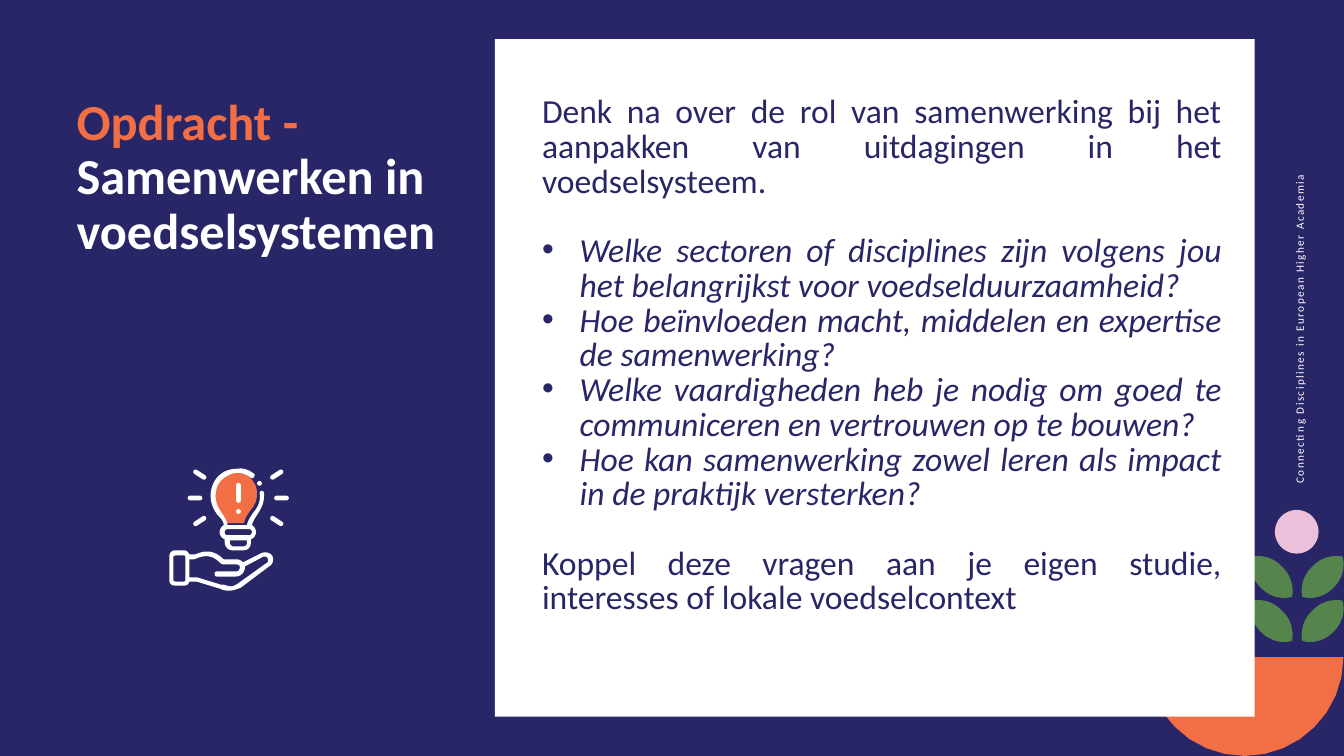
"""Build the assignment slide on collaborating in food systems."""
from dataclasses import dataclass

from lxml.etree import SubElement
from pptx import Presentation
from pptx.dml.color import RGBColor
from pptx.enum.shapes import MSO_SHAPE
from pptx.enum.text import PP_ALIGN
from pptx.oxml.ns import qn
from pptx.shapes.autoshape import Shape
from pptx.slide import Slide
from pptx.text.text import Font, TextFrame
from pptx.util import Cm, Pt

COLOURS = {
    "navy": "292668",
    "white": "FFFFFF",
    "orange": "F26F46",
    "green": "55854D",
    "pink": "ECC0DA",
}
OUTLINE_UNIT = 0.0254
CURVE_STEPS = 8
LINE_PITCH = Pt(24.8)


@dataclass
class Preset:
    kind: MSO_SHAPE
    left: float
    top: float
    width: float
    height: float
    colour: str
    rotation: float = 0


@dataclass
class Outline:
    contours: tuple[str, ...]
    colour: str
    left: float = 0
    top: float = 0
    mirrored: bool = False


@dataclass
class BodyLine:
    text: str
    bulleted: bool = False
    gap_before: bool = False


BOWL = ("M 196 0 C 196 54 152 98 98 98 44 98 0 54 0 0",)
LEAF = ("M 10 32 C 1 23 -2 11 1 1 11 -1 23 2 31 11 40 19 43 31 41 41 31 44 19 41 10 32",)
BULB_GLOW = (
    "M 255 488 L 255 490 C 255 498 252 502 248 507 246 510 243 514 242 519 "
    "L 223 519 C 222 514 219 510 217 507 214 502 211 498 211 490 211 482 214 477 217 474 "
    "222 470 227 467 233 467 237 467 242 469 246 472 246 472 255 479 255 488",
)
HAND = (
    "M 259 549 L 241 558 C 240 556 237 555 235 555 L 222 555 C 212 545 203 546 194 550 "
    "L 191 550 188 550 C 187 548 185 546 183 546 L 174 546 "
    "C 170 546 168 549 168 552 L 168 575 C 168 579 170 581 174 581 L 183 581 "
    "C 185 581 187 580 188 577 L 195 577 218 584 "
    "C 219 584 219 584 220 585 223 586 226 586 228 586 231 586 234 585 239 583 "
    "L 267 562 C 271 560 272 555 270 551 267 548 263 547 259 549",
    "M 184 576 L 183 577 174 577 172 576 172 552 174 551 183 551 184 552",
    "M 264 559 L 236 579 C 230 583 228 582 222 580 221 580 220 580 219 580 L 196 573 "
    "188 573 188 555 191 555 C 192 555 193 555 195 554 "
    "203 551 210 550 218 558 219 559 220 560 222 560 L 234 560 "
    "C 237 560 238 561 238 563 238 565 237 567 234 567 L 215 567 "
    "C 214 567 213 568 213 569 213 571 214 572 215 572 L 234 572 "
    "C 239 572 243 568 243 563 L 243 562 260 553 "
    "C 261 552 264 552 265 553 267 556 266 558 264 559",
)
BULB_RIM = (
    "M 222 521 C 220 522 218 525 218 528 218 531 220 534 223 535 L 223 538 "
    "C 223 543 227 546 231 546 L 241 546 C 246 546 249 543 249 538 L 249 535 "
    "C 252 534 254 531 254 528 254 525 252 522 250 521 251 517 253 514 255 511 "
    "258 506 262 501 262 492 L 262 490 C 262 488 261 487 260 487 "
    "258 487 257 489 258 490 L 258 492 C 258 500 255 504 251 509 "
    "249 512 246 516 245 521 L 226 521 C 225 516 222 512 220 509 217 504 214 500 214 492 "
    "214 484 217 479 220 476 225 472 230 469 236 469 240 469 245 471 249 474 "
    "250 475 252 474 252 473 253 472 253 470 252 470 247 466 241 464 236 465 "
    "229 465 222 467 217 472 212 477 209 484 209 492 209 501 213 507 216 511 "
    "219 514 222 517 222 521",
    "M 245 539 C 245 541 243 542 242 542 L 231 542 C 230 542 228 540 228 539 L 228 536 245 536",
    "M 226 525 L 247 525 C 249 525 250 526 250 528 250 529 249 531 247 531 L 226 531 "
    "C 224 531 223 530 223 528 223 526 224 525 226 525",
)
PLANT = [Outline(BOWL, "orange", 28.88, 16.56)] + [
    Outline(LEAF, "green", left, top, mirrored)
    for top in (15.11, 14.0)
    for left, mirrored in ((31.52, False), (33.86, True))
]
ICON_OUTLINES = [Outline(BULB_GLOW, "orange"), Outline(HAND, "white"), Outline(BULB_RIM, "white")]
BLOSSOM = Preset(MSO_SHAPE.OVAL, 32.13, 12.85, 1.1, 1.1, "pink")
PANEL = Preset(MSO_SHAPE.RECTANGLE, 12.47, 0.99, 19.15, 17.07, "white")
ICON_MARKS = [
    Preset(MSO_SHAPE.ROUNDED_RECTANGLE, 5.95, 12.17, 0.12, 0.5, "white"),
    Preset(MSO_SHAPE.OVAL, 5.95, 12.83, 0.12, 0.12, "white"),
    Preset(MSO_SHAPE.OVAL, 6.48, 12.12, 0.12, 0.12, "white"),
] + [
    Preset(MSO_SHAPE.ROUNDED_RECTANGLE, left, top, 0.37, 0.12, "white", rotation)
    for left, top, rotation in (
        (4.73, 12.49, 0), (6.91, 12.49, 0), (4.85, 11.9, 33),
        (6.79, 11.9, -33), (4.85, 13.07, -33), (6.79, 13.07, 33),
    )
]
BODY = [
    BodyLine("Denk na over de rol van samenwerking bij het aanpakken van uitdagingen in het voedselsysteem."),
    BodyLine("Welke sectoren of disciplines zijn volgens jou het belangrijkst voor voedselduurzaamheid?", True, True),
    BodyLine("Hoe beïnvloeden macht, middelen en expertise de samenwerking?", True),
    BodyLine("Welke vaardigheden heb je nodig om goed te communiceren en vertrouwen op te bouwen?", True),
    BodyLine("Hoe kan samenwerking zowel leren als impact in de praktijk versterken?", True),
    BodyLine("Koppel deze vragen aan je eigen studie, interesses of lokale voedselcontext", False, True),
]


def colour_of(name: str) -> RGBColor:
    return RGBColor.from_string(COLOURS[name])


def paint(shape: Shape, colour: str) -> None:
    shape.shadow.inherit = False
    shape.fill.solid()
    shape.fill.fore_color.rgb = colour_of(colour)
    shape.line.fill.background()


def draw_preset(slide: Slide, preset: Preset) -> None:
    shape = slide.shapes.add_shape(
        preset.kind, Cm(preset.left), Cm(preset.top), Cm(preset.width), Cm(preset.height)
    )
    if preset.kind == MSO_SHAPE.ROUNDED_RECTANGLE:
        shape.adjustments[0] = 0.5
    shape.rotation = preset.rotation
    paint(shape, preset.colour)


def contour_points(contour: str) -> list[tuple[float, float]]:
    points: list[tuple[float, float]] = []
    command = ""
    numbers: list[float] = []
    for token in contour.split():
        if token.isalpha():
            command = token
            continue
        numbers.append(float(token))
        if len(numbers) < (6 if command == "C" else 2):
            continue
        if command == "C":
            start = points[-1]
            for step in range(1, CURVE_STEPS + 1):
                t = step / CURVE_STEPS
                weights = ((1 - t) ** 3, 3 * t * (1 - t) ** 2, 3 * t * t * (1 - t), t ** 3)
                points.append(tuple(
                    sum(w * v for w, v in zip(weights, (start[axis], *numbers[axis::2])))
                    for axis in (0, 1)
                ))
        else:
            points.append((numbers[0], numbers[1]))
        numbers = []
    return points


def draw_outline(slide: Slide, outline: Outline) -> None:
    direction = -1 if outline.mirrored else 1
    builder = None
    for contour in outline.contours:
        start, *rest = [
            (Cm(outline.left + direction * x * OUTLINE_UNIT), Cm(outline.top + y * OUTLINE_UNIT))
            for x, y in contour_points(contour)
        ]
        if builder is None:
            builder = slide.shapes.build_freeform(*start)
        else:
            builder.move_to(*start)
        builder.add_line_segments(rest, close=True)
    paint(builder.convert_to_shape(), outline.colour)


def add_text_box(slide: Slide, left: float, top: float, width: float, height: float,
                 rotation: float = 0) -> TextFrame:
    box = slide.shapes.add_textbox(Cm(left), Cm(top), Cm(width), Cm(height))
    box.rotation = rotation
    box.text_frame.word_wrap = True
    return box.text_frame


def style_font(font: Font, size: float, colour: str, bold: bool = False, italic: bool = False) -> None:
    font.name, font.size, font.bold, font.italic = "Calibri", Pt(size), bold, italic
    font.color.rgb = colour_of(colour)


def write_tagline(slide: Slide) -> None:
    frame = add_text_box(slide, 26.7, 6.07, 12.12, 0.61, 270)
    frame.text = "Connecting Disciplines in European Higher Academia"
    run = frame.paragraphs[0].runs[0]
    style_font(run.font, 8, "white")
    run._r.get_or_add_rPr().set("spc", "100")


def write_title(slide: Slide) -> None:
    paragraph = add_text_box(slide, 1.68, 2.31, 9.75, 4.93).paragraphs[0]
    paragraph.line_spacing = 0.9
    for text, colour in (("Opdracht - ", "orange"), ("Samenwerken in voedselsystemen", "white")):
        run = paragraph.add_run()
        run.text = text
        style_font(run.font, 36, colour, bold=True)


def write_body(slide: Slide) -> None:
    frame = add_text_box(slide, 13.41, 2.29, 17.63, 14.35)
    frame.text = "\n".join([line.text for line in BODY])
    for paragraph, line in zip(frame.paragraphs, BODY):
        paragraph.alignment = PP_ALIGN.JUSTIFY
        paragraph.line_spacing = LINE_PITCH
        if line.gap_before:
            paragraph.space_before = LINE_PITCH
        if line.bulleted:
            properties = paragraph._p.get_or_add_pPr()
            properties.set("marL", str(int(Cm(0.95))))
            properties.set("indent", str(-int(Cm(0.95))))
            SubElement(properties, qn("a:buFont")).set("typeface", "Arial")
            SubElement(properties, qn("a:buChar")).set("char", "•")
        style_font(paragraph.runs[0].font, 24, "navy", italic=line.bulleted)


def main() -> None:
    presentation = Presentation()
    presentation.slide_width, presentation.slide_height = Cm(33.87), Cm(19.05)
    slide = presentation.slides.add_slide(presentation.slide_layouts[6])
    slide.background.fill.solid()
    slide.background.fill.fore_color.rgb = colour_of("navy")
    write_tagline(slide)
    for outline in PLANT:
        draw_outline(slide, outline)
    for preset in (BLOSSOM, PANEL):
        draw_preset(slide, preset)
    write_body(slide)
    write_title(slide)
    for outline in ICON_OUTLINES:
        draw_outline(slide, outline)
    for preset in ICON_MARKS:
        draw_preset(slide, preset)
    presentation.save("out.pptx")


if __name__ == "__main__":
    main()
